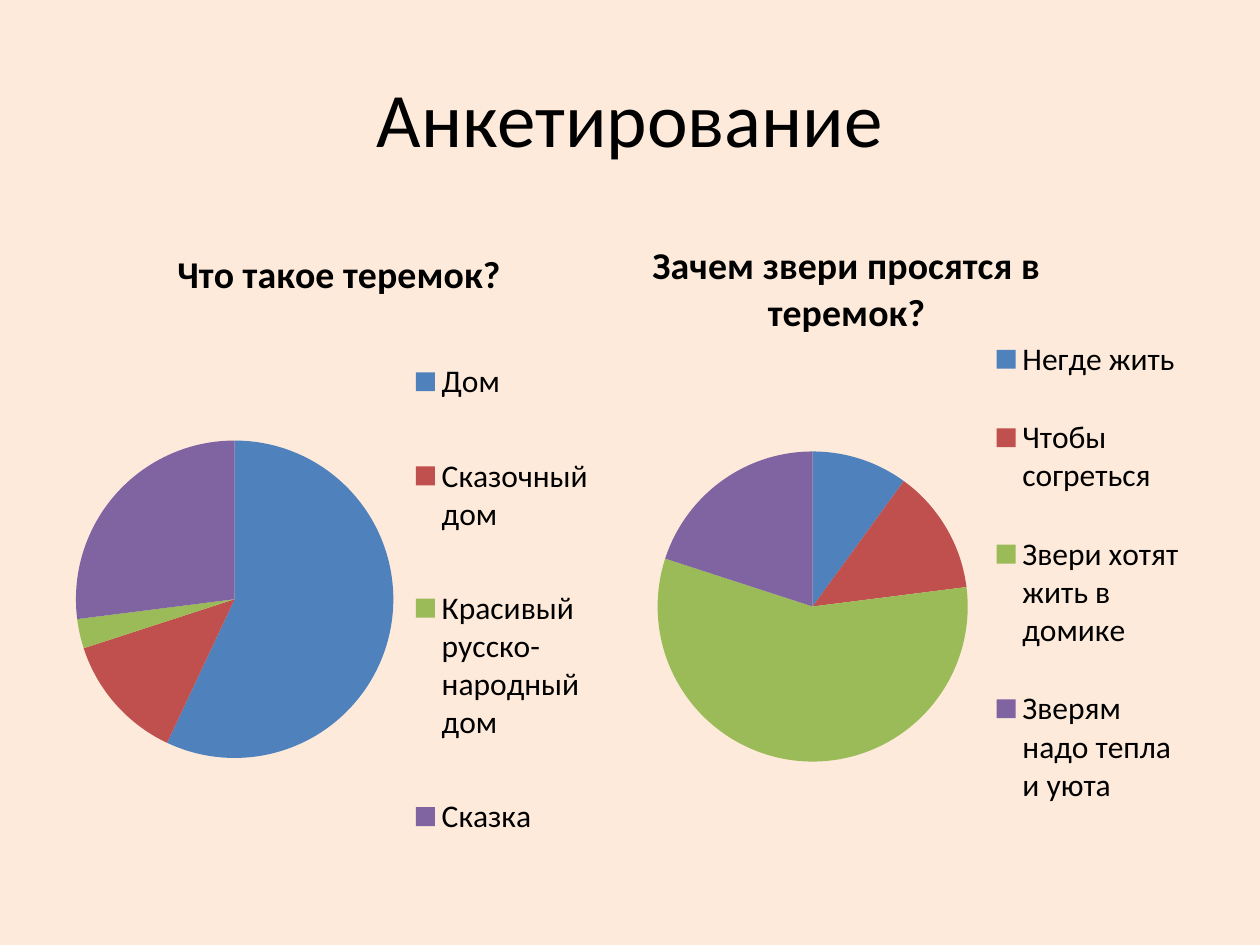
import pptx
import pptx.chart.data
import pptx.dml.color
import pptx.enum.chart
import pptx.enum.text
import pptx.oxml
import pptx.oxml.ns
import pptx.util

FONT = "Calibri"
SLICE_COLOURS = ["4F81BD", "C0504D", "9BBB59", "8064A2"]
HEADING = "Анкетирование"
# Places inside a chart are shares of its width and height: x, y, width, height.
SURVEYS = [
    {
        "question": "Что такое теремок?",
        "series": "Что такое теремок?",
        "answers": [("Дом", 57), ("Сказочный дом", 13),
                    ("Красивый русско- народный дом", 3), ("Сказка", 27)],
        "frame": (0.47, 1.8, 4.42, 5.28),
        "title": (0.2, 0.02),
        "pie": (0.03, 0.32, 0.57, 0.48),
        "legend": (0.62, 0.12, 0.35, 0.88),
    },
    {
        "question": "Зачем звери просятся в теремок?",
        "series": "Series 1",
        "answers": [("Негде жить", 10), ("Чтобы согреться", 13),
                    ("Звери хотят жить в домике", 57),
                    ("Зверям надо тепла и уюта", 20)],
        "frame": (5.08, 1.56, 4.42, 5.47),
        "title": (0.01, 0.05),
        "pie": (0.03, 0.37, 0.56, 0.45),
        "legend": (0.64, 0.15, 0.34, 0.79),
    },
]


def colour(value):
    return pptx.dml.color.RGBColor.from_string(value)


def inches(values):
    return [pptx.util.Inches(value) for value in values]


def style(font, size, bold=False):
    formats = {"name": FONT, "size": pptx.util.Pt(size), "bold": bold}
    for name, value in formats.items():
        setattr(font, name, value)
    font.color.rgb = colour("000000")


def place(element, shares, inner=False):
    """Give a chart part a manual layout, in shares of the chart."""
    tags = ['<c:layoutTarget val="inner"/>'] if inner else []
    tags += ['<c:xMode val="edge"/>', '<c:yMode val="edge"/>']
    tags += [f'<c:{name} val="{share}"/>' for name, share in zip("xywh", shares)]
    layout = pptx.oxml.parse_xml(
        f'<c:layout {pptx.oxml.ns.nsdecls("c")}><c:manualLayout>'
        f'{"".join(tags)}</c:manualLayout></c:layout>')
    for old in element.findall(pptx.oxml.ns.qn("c:layout")):
        element.remove(old)
    before = [child for child in element
              if child.tag in map(pptx.oxml.ns.qn, ("c:tx", "c:legendPos"))]
    element.insert(len(before), layout)


def add_heading(page):
    box = page.shapes.add_textbox(*inches((0.5, 0.3, 9, 1.25)))
    frame = box.text_frame
    frame.word_wrap = True
    frame.vertical_anchor = pptx.enum.text.MSO_ANCHOR.MIDDLE
    para = frame.paragraphs[0]
    para.alignment = pptx.enum.text.PP_ALIGN.CENTER
    span = para.add_run()
    span.text = HEADING
    style(span.font, 44)


def add_pie(page, survey):
    data = pptx.chart.data.CategoryChartData()
    answers, votes = zip(*survey["answers"])
    data.categories = answers
    data.add_series(survey["series"], votes)
    chart = page.shapes.add_chart(
        pptx.enum.chart.XL_CHART_TYPE.PIE, *inches(survey["frame"]), data).chart
    style(chart.font, 18)

    chart.has_title = True
    para = chart.chart_title.text_frame.paragraphs[0]
    span = para.add_run()
    span.text = survey["question"]
    style(span.font, 21.6, bold=True)
    chart.chart_title.include_in_layout = False

    chart.has_legend = True
    chart.legend.position = pptx.enum.chart.XL_LEGEND_POSITION.RIGHT
    chart.legend.include_in_layout = False
    style(chart.legend.font, 18)

    plot = chart.plots[0]
    plot.vary_by_categories = True
    for index, value in enumerate(SLICE_COLOURS):
        fill = plot.series[0].points[index].format.fill
        fill.solid()
        fill.fore_color.rgb = colour(value)

    root = chart.element.chart
    place(root.find(pptx.oxml.ns.qn("c:title")), survey["title"])
    place(root.plotArea, survey["pie"], inner=True)
    place(root.find(pptx.oxml.ns.qn("c:legend")), survey["legend"])


def main():
    deck = pptx.Presentation()
    deck.slide_width, deck.slide_height = inches((10, 7.5))
    page = deck.slides.add_slide(deck.slide_layouts[6])
    page.background.fill.solid()
    page.background.fill.fore_color.rgb = colour("FDEADA")
    add_heading(page)
    for survey in SURVEYS:
        add_pie(page, survey)
    deck.save("out.pptx")


if __name__ == "__main__":
    main()
